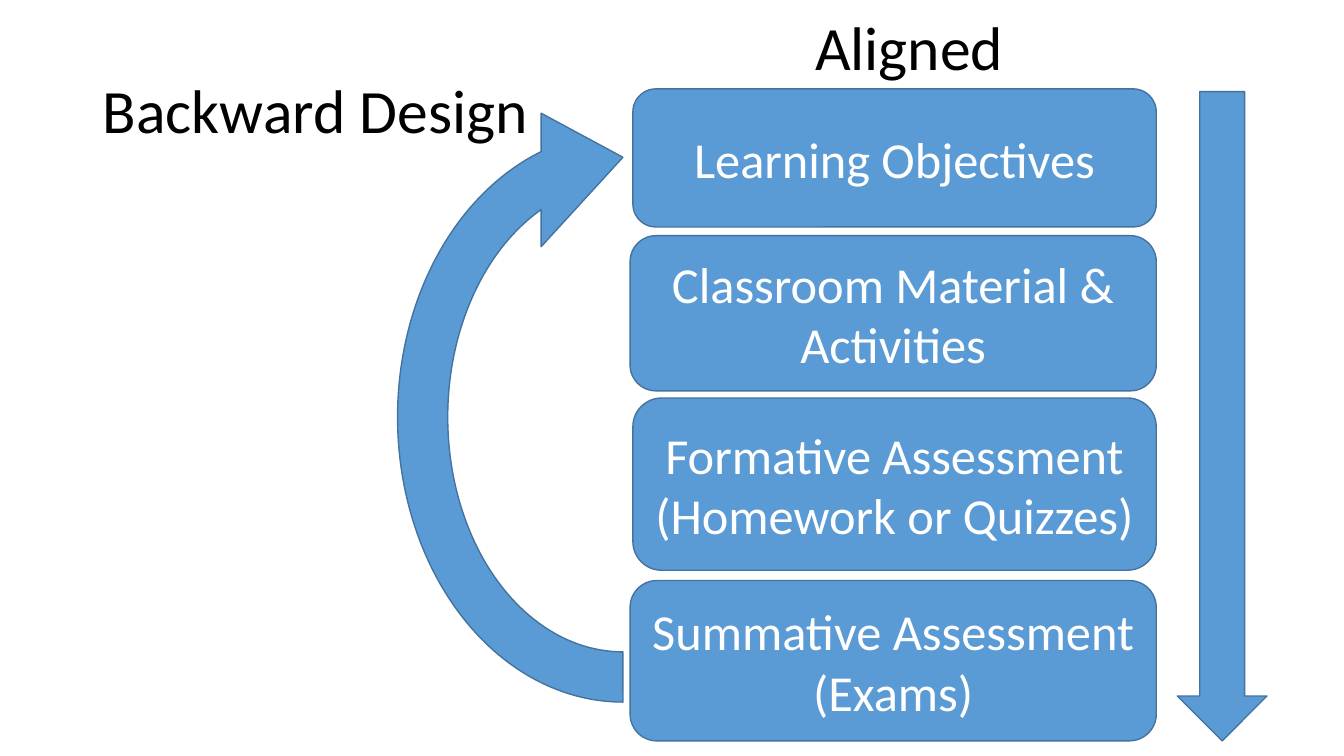
from dataclasses import dataclass

from pptx import Presentation
from pptx import util as u
from pptx.dml.color import RGBColor
from pptx.enum import shapes, text


@dataclass(frozen=True)
class Theme:
    font: str = "Calibri"
    ink: str = "000000"
    fill: str = "5B9BD5"
    outline: str = "43739E"
    on_fill: str = "FFFFFF"
    heading: int = 44
    label: int = 36
    line_width: int = 1


class PageBuilder:
    def __init__(self, page, theme):
        self.page = page
        self.theme = theme

    def add_words(self, frame, words, size, color, align):
        para = frame.paragraphs[0]
        para.alignment = align
        span = para.add_run()
        span.text = words
        span.font.name = self.theme.font
        span.font.size = u.Pt(size)
        span.font.color.rgb = RGBColor.from_string(color)
        return para

    def title(self, words, *place):
        box = self.page.shapes.title
        box.left, box.top, box.width, box.height = map(u.Cm, place)
        box.text_frame.vertical_anchor = text.MSO_ANCHOR.MIDDLE
        para = self.add_words(box.text_frame, words, self.theme.heading,
                              self.theme.ink, text.PP_ALIGN.LEFT)
        para.line_spacing = 0.9

    def caption(self, words, *place):
        box = self.page.shapes.add_textbox(*map(u.Cm, place))
        box.text_frame.word_wrap = False
        box.text_frame.auto_size = text.MSO_AUTO_SIZE.SHAPE_TO_FIT_TEXT
        self.add_words(box.text_frame, words, self.theme.heading,
                       self.theme.ink, text.PP_ALIGN.LEFT)

    def shape(self, kind, *place):
        shape = self.page.shapes.add_shape(kind, *map(u.Cm, place))
        shape.shadow.inherit = False
        shape.fill.solid()
        shape.fill.fore_color.rgb = RGBColor.from_string(self.theme.fill)
        shape.line.color.rgb = RGBColor.from_string(self.theme.outline)
        shape.line.width = u.Pt(self.theme.line_width)
        return shape

    def step(self, words, *place):
        box = self.shape(shapes.MSO_SHAPE.ROUNDED_RECTANGLE, *place)
        box.text_frame.word_wrap = True
        box.text_frame.vertical_anchor = text.MSO_ANCHOR.MIDDLE
        self.add_words(box.text_frame, words, self.theme.label,
                       self.theme.on_fill, text.PP_ALIGN.CENTER)

    def curved_arrow(self, adjustments, rotation, *place):
        arrow = self.shape(shapes.MSO_SHAPE.CIRCULAR_ARROW, *place)
        arrow.rotation = rotation
        for index, value in enumerate(adjustments):
            arrow.adjustments[index] = value


def main():
    deck = Presentation()
    deck.slide_width, deck.slide_height = u.Cm(33.87), u.Cm(19.05)
    page = deck.slides.add_slide(deck.slide_layouts[5])
    builder = PageBuilder(page, Theme())

    # Headings
    builder.title("Backward Design", 2.34, 1.02, 29.21, 3.68)
    builder.caption("Aligned", 20.29, 0.1, 5.31, 2.13)

    # Course steps, top to bottom: words, left, top, height
    right_edge = 29.14
    steps = [
        ("Learning Objectives", 15.95, 2.24, 3.48),
        ("Classroom Material & Activities", 15.88, 5.94, 3.91),
        ("Formative Assessment (Homework or Quizzes)", 15.95, 10.03, 4.34),
        ("Summative Assessment (Exams)", 15.88, 14.63, 4.04),
    ]
    for words, left, top, height in steps:
        builder.step(words, left, top, right_edge - left, height)

    # Alignment runs down, design runs back up
    builder.shape(shapes.MSO_SHAPE.DOWN_ARROW, 29.67, 2.31, 2.26, 16.36)
    builder.curved_arrow((0.094, 11.423, 204.577, 108, 0.125), 270,
                         7.47, 3.78, 16.46, 13.46)

    deck.save("out.pptx")


if __name__ == "__main__":
    main()
